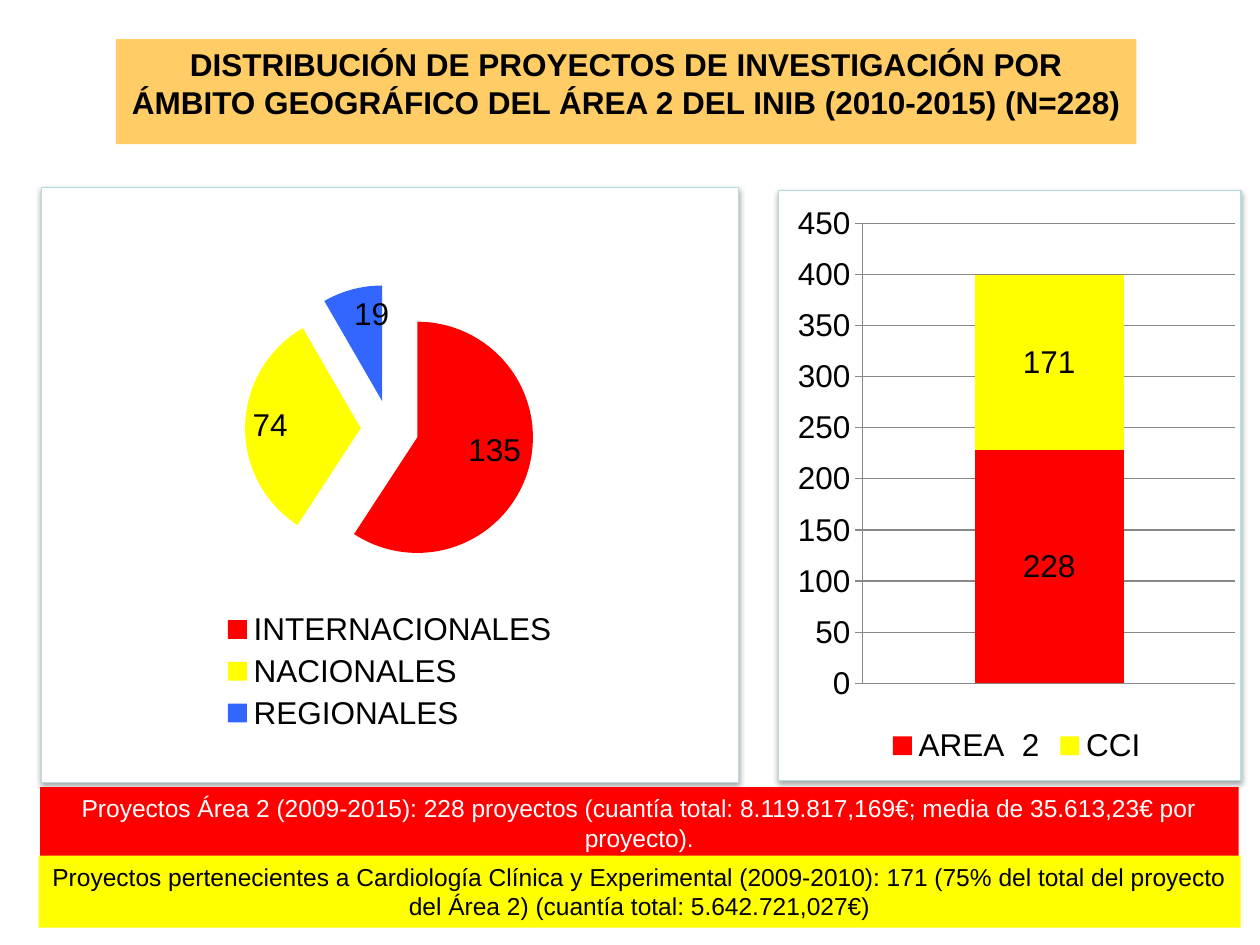
from dataclasses import dataclass

from lxml import etree
from pptx import Presentation
from pptx.chart.data import CategoryChartData
from pptx.dml.color import RGBColor
from pptx.enum.chart import XL_CHART_TYPE, XL_LABEL_POSITION, XL_LEGEND_POSITION, XL_TICK_MARK
from pptx.enum.shapes import MSO_SHAPE
from pptx.enum.text import MSO_ANCHOR, MSO_AUTO_SIZE, PP_ALIGN
from pptx.oxml import parse_xml
from pptx.oxml.ns import nsdecls, qn
from pptx.util import Cm, Pt

RED = RGBColor(0xFF, 0x00, 0x00)
YELLOW = RGBColor(0xFF, 0xFF, 0x00)
BLUE = RGBColor(0x33, 0x66, 0xFF)
ORANGE = RGBColor(0xFF, 0xCC, 0x66)
TEAL = RGBColor(0xB6, 0xDC, 0xDF)
GRAY = RGBColor(0x88, 0x88, 0x88)
BLACK = RGBColor(0x00, 0x00, 0x00)
WHITE = RGBColor(0xFF, 0xFF, 0xFF)

PIE = XL_CHART_TYPE.PIE
STACKED = XL_CHART_TYPE.COLUMN_STACKED
INSIDE_END = XL_LABEL_POSITION.INSIDE_END
CENTER = XL_LABEL_POSITION.CENTER
BOTTOM = XL_LEGEND_POSITION.BOTTOM
OUTSIDE = XL_TICK_MARK.OUTSIDE
RECT = MSO_SHAPE.RECTANGLE
FONT = "Arial"


@dataclass
class Box:
    left: float
    top: float
    width: float
    height: float

    def emu(self):
        return Cm(self.left), Cm(self.top), Cm(self.width), Cm(self.height)


@dataclass
class Banner:
    box: Box
    text: str
    fill: RGBColor
    color: RGBColor
    size: int = 14
    bold: bool = False


TITLE = Banner(
    Box(2.34, 0.79, 20.57, 1.8),
    "DISTRIBUCIÓN DE PROYECTOS DE INVESTIGACIÓN POR ÁMBITO GEOGRÁFICO "
    "DEL ÁREA 2 DEL INIB (2010-2015) (N=228)",
    ORANGE, BLACK, 18, True)
NOTES = [
    Banner(Box(0.81, 15.87, 24.16, 1.45),
           "Proyectos Área 2 (2009-2015): 228 proyectos (cuantía total: "
           "8.119.817,169€; media de 35.613,23€ por proyecto).",
           RED, WHITE),
    Banner(Box(0.78, 17.25, 24.23, 1.45),
           "Proyectos pertenecientes a Cardiología Clínica y Experimental "
           "(2009-2010): 171 (75% del total del proyecto del Área 2) "
           "(cuantía total: 5.642.721,027€)",
           YELLOW, BLACK),
]
PANELS = [Box(0.84, 3.78, 14.05, 11.99), Box(15.7, 3.84, 9.32, 11.89)]
SCOPES = [("INTERNACIONALES", 135, RED), ("NACIONALES", 74, YELLOW), ("REGIONALES", 19, BLUE)]
GROUPS = [("AREA  2", 228, RED), ("CCI", 171, YELLOW)]
PIE_LAYOUT = {"x": 0.27, "y": 0.11, "w": 0.46, "h": 0.57}


def fill_solid(obj, color: RGBColor) -> None:
    obj.fill.solid()
    obj.fill.fore_color.rgb = color


def format_banner(sp, banner: Banner) -> None:
    sp.left, sp.top, sp.width, sp.height = banner.box.emu()
    fill_solid(sp, banner.fill)
    tf = sp.text_frame
    tf.text = banner.text
    tf.word_wrap = True
    tf.auto_size = MSO_AUTO_SIZE.SHAPE_TO_FIT_TEXT
    tf.vertical_anchor = MSO_ANCHOR.TOP
    tf.margin_left = tf.margin_right = Cm(0.2)
    p = tf.paragraphs[0]
    p.alignment = PP_ALIGN.CENTER
    p.font.name = FONT
    p.font.size = Pt(banner.size)
    p.font.bold = banner.bold
    p.font.color.rgb = banner.color


def add_panel(slide, box: Box) -> None:
    sp = slide.shapes.add_shape(RECT, *box.emu())
    fill_solid(sp, WHITE)
    sp.line.color.rgb = TEAL
    sp.line.width = Pt(0.75)
    sp.shadow.inherit = False
    effects = sp._element.spPr.find(qn("a:effectLst"))
    effects.append(parse_xml(
        f'<a:outerShdw {nsdecls("a")} blurRad="{Pt(3.1)}" dist="{Pt(1.8)}" dir="5400000" '
        'rotWithShape="0"><a:srgbClr val="000000"><a:alpha val="35000"/></a:srgbClr>'
        '</a:outerShdw>'))


def add_chart(slide, kind, box: Box, data: CategoryChartData, label_position):
    chart = slide.shapes.add_chart(kind, *box.emu(), data).chart
    chart.has_title = False
    chart.font.name = FONT
    chart.font.size = Pt(18)
    chart.font.color.rgb = BLACK
    chart.has_legend = True
    chart.legend.position = BOTTOM
    chart.legend.include_in_layout = False
    plot = chart.plots[0]
    plot.has_data_labels = True
    labels = plot.data_labels
    labels.show_value = True
    labels.show_percentage = False
    labels.position = label_position
    return chart


def set_plot_layout(chart, layout: dict[str, float]) -> None:
    area = chart._chartSpace.chart.plotArea
    for old in area.findall(qn("c:layout")):
        area.remove(old)
    node = etree.Element(qn("c:layout"))
    manual = etree.SubElement(node, qn("c:manualLayout"))
    settings = {"layoutTarget": "inner", "xMode": "edge", "yMode": "edge", **layout}
    for tag, value in settings.items():
        etree.SubElement(manual, qn(f"c:{tag}"), val=str(value))
    area.insert(0, node)


def add_scope_pie(slide) -> None:
    data = CategoryChartData()
    data.categories = [name for name, _, _ in SCOPES]
    data.add_series("Series 1", [value for _, value, _ in SCOPES])
    chart = add_chart(slide, PIE, Box(1.52, 4.6, 12.67, 10.26), data, INSIDE_END)
    chart.plots[0].vary_by_categories = True
    series = chart.plots[0].series[0]
    for i, (_, _, color) in enumerate(SCOPES):
        fill_solid(series.points[i].format, color)
    explosion = etree.Element(qn("c:explosion"), val="25")
    series._element.find(qn("c:tx")).addnext(explosion)
    set_plot_layout(chart, PIE_LAYOUT)


def add_group_columns(slide) -> None:
    data = CategoryChartData()
    data.categories = ["1"]
    for name, value, _ in GROUPS:
        data.add_series(name, [value])
    chart = add_chart(slide, STACKED, Box(15.9, 3.91, 9.19, 11.61), data, CENTER)
    plot = chart.plots[0]
    plot.vary_by_categories = False
    plot.gap_width = 150
    plot.overlap = 100
    for series, (_, _, color) in zip(plot.series, GROUPS):
        fill_solid(series.format, color)
    chart.category_axis.visible = False
    axis = chart.value_axis
    axis.minimum_scale = 0
    axis.maximum_scale = 450
    axis.major_unit = 50
    axis.major_tick_mark = OUTSIDE
    axis.has_major_gridlines = True
    for line in (axis.format.line, axis.major_gridlines.format.line):
        line.color.rgb = GRAY
        line.width = Pt(0.75)


def main() -> None:
    prs = Presentation()
    prs.slide_width, prs.slide_height = Cm(25.4), Cm(19.05)
    slide = prs.slides.add_slide(prs.slide_layouts[5])
    format_banner(slide.shapes.title, TITLE)
    for box in PANELS:
        add_panel(slide, box)
    add_scope_pie(slide)
    add_group_columns(slide)
    for note in NOTES:
        sp = slide.shapes.add_shape(RECT, *note.box.emu())
        sp.line.fill.background()
        sp.shadow.inherit = False
        format_banner(sp, note)
    prs.save("out.pptx")


if __name__ == "__main__":
    main()
